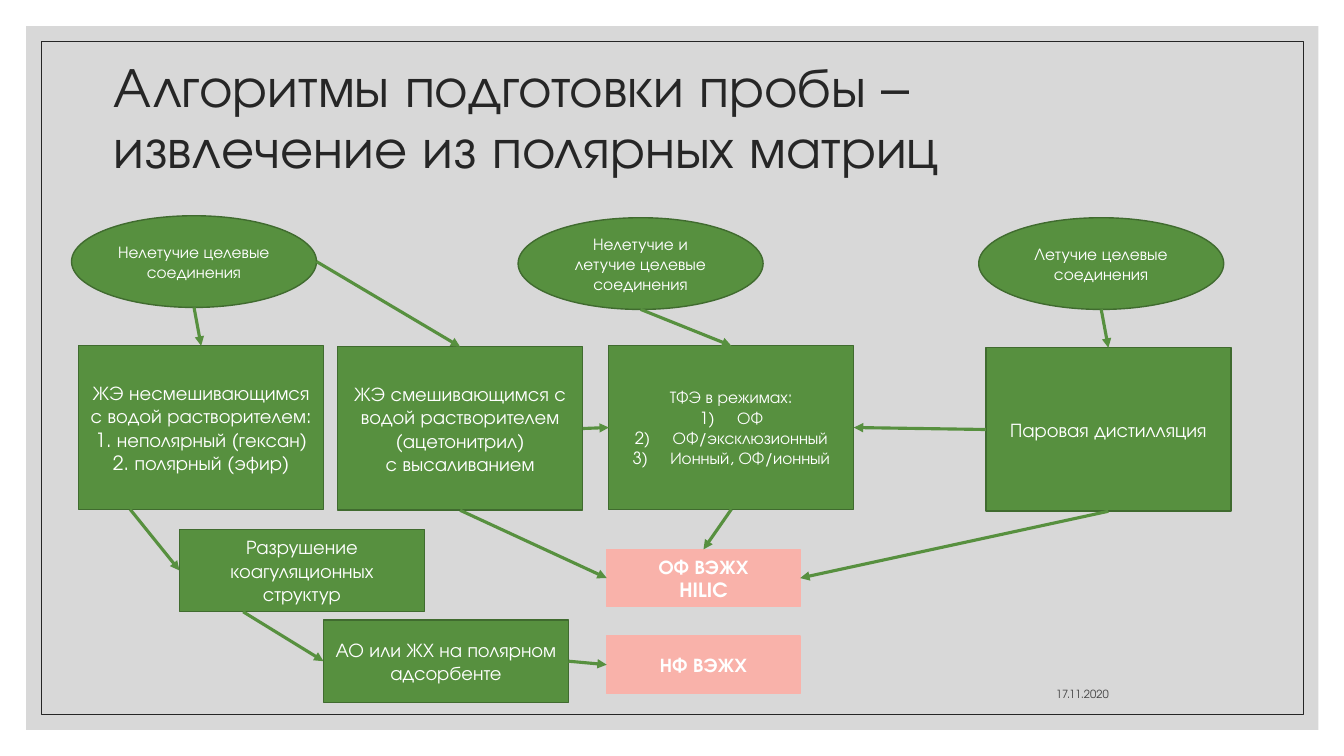
from lxml import etree
from pptx import Presentation
from pptx.dml.color import RGBColor
from pptx.enum import shapes, text
from pptx.oxml import ns
from pptx.util import Pt

FONT = "TeX Gyre Adventor"
GREEN, DARK_GREEN, PINK, WHITE = "57903F", "406B2F", "F9B2AA", "FFFFFF"
RECTANGLE, OVAL = shapes.MSO_SHAPE.RECTANGLE, shapes.MSO_SHAPE.OVAL
CENTER, MIDDLE = text.PP_ALIGN.CENTER, text.MSO_ANCHOR.MIDDLE


def color(hex_string):
    return RGBColor.from_string(hex_string)


def write(shape, lines, size, hex_color, align, anchor, bold=False):
    """Fill a shape with one paragraph per line."""
    frame = shape.text_frame
    frame.word_wrap = True
    frame.vertical_anchor = anchor
    for index, line in enumerate(lines):
        paragraph = frame.add_paragraph() if index else frame.paragraphs[0]
        paragraph.alignment = align
        run = paragraph.add_run()
        run.text = line
        run.font.name = FONT
        run.font.size = Pt(size)
        run.font.bold = bold
        run.font.color.rgb = color(hex_color)


presentation = Presentation()
presentation.slide_width = Pt(960)
presentation.slide_height = Pt(540)
slide = presentation.slides.add_slide(presentation.slide_layouts[6])

# Background panel and thin frame
panel = slide.shapes.add_shape(RECTANGLE, Pt(18.7), Pt(18.7), Pt(923), Pt(502.6))
panel.shadow.inherit = False
panel.fill.solid()
panel.fill.fore_color.rgb = color("BFBFBF")
panel.line.fill.background()
panel_color = panel.fill._xPr.find(".//" + ns.qn("a:srgbClr"))
etree.SubElement(panel_color, ns.qn("a:alpha"), val="60000")

border = slide.shapes.add_shape(RECTANGLE, Pt(29.5), Pt(29.5), Pt(901.4), Pt(481))
border.shadow.inherit = False
border.fill.background()
border.line.color.rgb = color("262626")
border.line.width = Pt(0.5)

# Title and date
title = slide.shapes.add_textbox(Pt(74), Pt(31.7), Pt(792), Pt(108))
write(title, ["Алгоритмы подготовки пробы – извлечение из полярных матриц"],
      40, "262626", text.PP_ALIGN.LEFT, MIDDLE)
title.text_frame.paragraphs[0].line_spacing = 0.9
date = slide.shapes.add_textbox(Pt(571.7), Pt(475.2), Pt(227.5), Pt(28.8))
write(date, ["17.11.2020"], 8, "404040", text.PP_ALIGN.RIGHT, text.MSO_ANCHOR.BOTTOM)

# Kind of node: preset, width, height, fill, line, text size, bold
KINDS = {
    "target": (OVAL, 175, 65.5, GREEN, DARK_GREEN, 12, False),
    "method": (RECTANGLE, 175, 116.8, GREEN, DARK_GREEN, 14, False),
    "modes": (RECTANGLE, 175, 116.8, GREEN, DARK_GREEN, 12, False),
    "step": (RECTANGLE, 175, 59, GREEN, DARK_GREEN, 14, False),
    "result": (RECTANGLE, 138.2, 41, PINK, PINK, 14, True),
}
NODES = [
    ("nonvolatile", "target", 51.1, 154.1, ["Нелетучие целевые соединения"]),
    ("mixed", "target", 370.1, 155.5, ["Нелетучие и летучие целевые соединения"]),
    ("volatile", "target", 699.1, 155.5, ["Летучие целевые соединения"]),
    ("immiscible", "method", 56.2, 247,
     ["ЖЭ несмешивающимся с водой растворителем: 1. неполярный (гексан)",
      "2. полярный (эфир)"]),
    ("breaking", "step", 128.2, 378, ["Разрушение коагуляционных структур"]),
    ("adsorbent", "step", 231.1, 442.8, ["АО или ЖХ на полярном адсорбенте"]),
    ("normal phase", "result", 433.4, 454.3, ["НФ ВЭЖХ"]),
    ("miscible", "method", 241.2, 247.7,
     ["ЖЭ смешивающимся с водой растворителем (ацетонитрил)", "с высаливанием"]),
    ("reversed phase", "result", 433.4, 392.4, ["ОФ ВЭЖХ", "HILIC"]),
    ("solid phase", "modes", 434.9, 247,
     ["ТФЭ в режимах:", "ОФ", "ОФ/эксклюзионный", "Ионный, ОФ/ионный"]),
    ("distillation", "method", 704.2, 248.4, ["Паровая дистилляция"]),
]
nodes = {}
for name, kind, left, top, lines in NODES:
    preset, width, height, fill, outline, size, bold = KINDS[kind]
    shape = slide.shapes.add_shape(preset, Pt(left), Pt(top), Pt(width), Pt(height))
    shape.shadow.inherit = False
    shape.fill.solid()
    shape.fill.fore_color.rgb = color(fill)
    shape.line.color.rgb = color(outline)
    shape.line.width = Pt(1)
    write(shape, lines, size, WHITE, CENTER, MIDDLE, bold)
    nodes[name] = shape

# Numbered list of the solid-phase modes
for paragraph in nodes["solid phase"].text_frame.paragraphs[1:]:
    properties = paragraph._p.get_or_add_pPr()
    properties.set("marL", str(Pt(27)))
    properties.set("indent", str(-Pt(27)))
    etree.SubElement(properties, ns.qn("a:buFont"), typeface=FONT)
    etree.SubElement(properties, ns.qn("a:buAutoNum"), type="arabicParenR")

# Arrows run between points given as fractions of a node's width and height
TOP, BOTTOM, LEFT, RIGHT = (0.5, 0), (0.5, 1), (0, 0.5), (1, 0.5)
ARROWS = [
    ("nonvolatile", BOTTOM, "immiscible", TOP),
    ("nonvolatile", RIGHT, "miscible", TOP),
    ("immiscible", (0.21, 1), "breaking", LEFT),
    ("breaking", (0.26, 1), "adsorbent", LEFT),
    ("adsorbent", RIGHT, "normal phase", LEFT),
    ("miscible", BOTTOM, "reversed phase", LEFT),
    ("mixed", BOTTOM, "solid phase", TOP),
    ("solid phase", BOTTOM, "reversed phase", TOP),
    ("volatile", BOTTOM, "distillation", TOP),
    ("miscible", RIGHT, "solid phase", LEFT),
    ("distillation", BOTTOM, "reversed phase", RIGHT),
    ("distillation", LEFT, "solid phase", RIGHT),
]
for source, source_point, target, target_point in ARROWS:
    ends = []
    for name, (across, down) in ((source, source_point), (target, target_point)):
        node = nodes[name]
        ends += [int(node.left + across * node.width), int(node.top + down * node.height)]
    arrow = slide.shapes.add_connector(shapes.MSO_CONNECTOR.STRAIGHT, *ends)
    arrow.line.color.rgb = color(GREEN)
    arrow.line.width = Pt(2.25)
    etree.SubElement(arrow.line._get_or_add_ln(), ns.qn("a:tailEnd"), type="triangle")
    etree.SubElement(arrow._element.spPr, ns.qn("a:effectLst"))

presentation.save("out.pptx")
